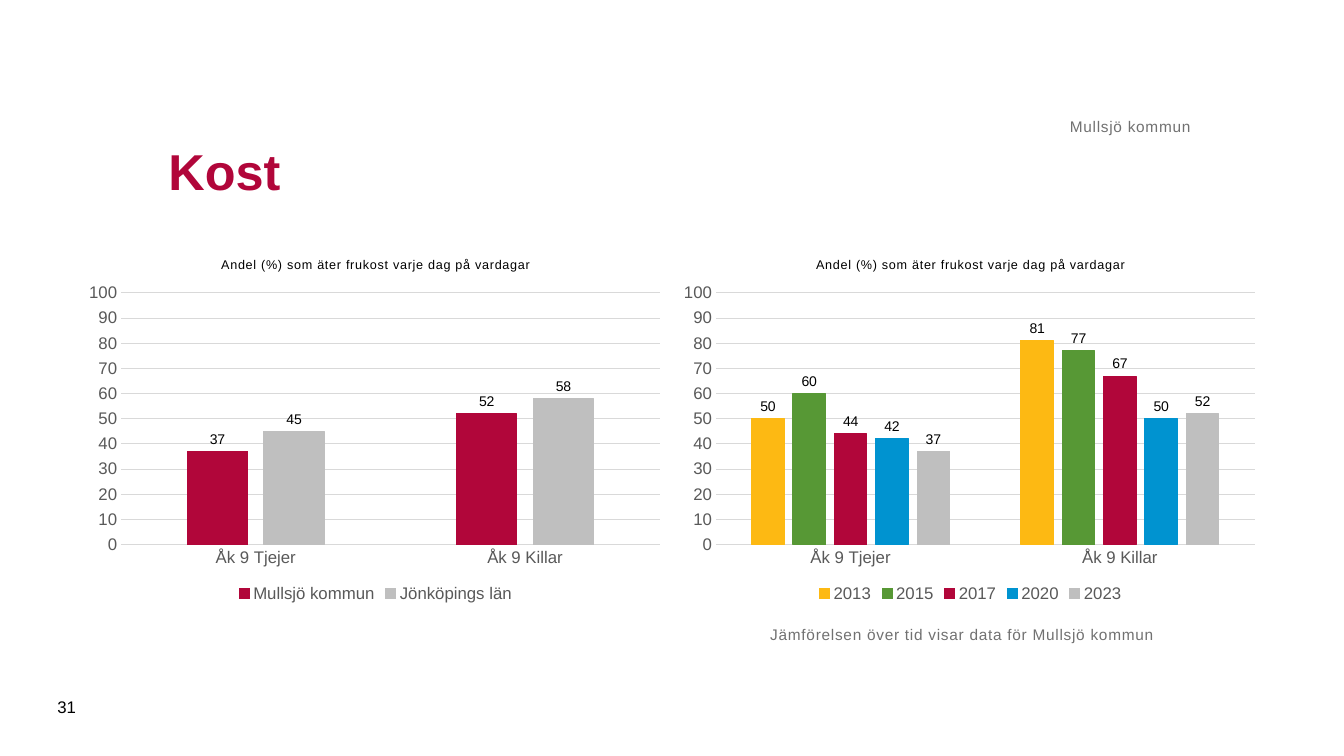
from dataclasses import dataclass

from lxml import etree
from pptx import Presentation
from pptx.chart.data import CategoryChartData
from pptx.dml.color import RGBColor
from pptx.enum.chart import XL_CHART_TYPE, XL_LABEL_POSITION, XL_LEGEND_POSITION, XL_TICK_MARK
from pptx.enum.text import MSO_ANCHOR, PP_ALIGN
from pptx.oxml import parse_xml
from pptx.oxml.ns import nsdecls, qn
from pptx.util import Inches, Pt

COLUMNS = XL_CHART_TYPE.COLUMN_CLUSTERED
OUTSIDE = XL_LABEL_POSITION.OUTSIDE_END
BOTTOM_LEGEND = XL_LEGEND_POSITION.BOTTOM
NO_TICK = XL_TICK_MARK.NONE
TOP, MIDDLE, BOTTOM = MSO_ANCHOR.TOP, MSO_ANCHOR.MIDDLE, MSO_ANCHOR.BOTTOM
LEFT, RIGHT = PP_ALIGN.LEFT, PP_ALIGN.RIGHT


@dataclass(frozen=True)
class Theme:
    font: str = "Arial"
    black: str = "000000"
    axis: str = "595959"
    muted: str = "717171"
    grid: str = "D9D9D9"
    red: str = "B1063A"
    silver: str = "BFBFBF"
    yellow: str = "FDB913"
    green: str = "579835"
    blue: str = "0093D0"
    title_size: float = 36
    axis_size: float = 12
    note_size: float = 11
    label_size: float = 10
    caption_size: float = 9
    hairline: float = 0.75
    tracking: float = 0.5
    number_format: str = "#,##0;#,##0"


class SlideBuilder:
    """Places styled elements on a slide; areas are percentages of its size."""

    def __init__(self, deck, theme):
        self.deck = deck
        self.theme = theme
        self.page = deck.slides.add_slide(deck.slide_layouts[5])

    def place(self, area):
        left, top, width, height = area
        across, down = self.deck.slide_width / 100, self.deck.slide_height / 100
        return int(left * across), int(top * down), int(width * across), int(height * down)

    def style_font(self, font, size, color, bold=False):
        font.name, font.size, font.bold = self.theme.font, Pt(size), bold
        font.color.rgb = RGBColor.from_string(color)

    def style_line(self, line, color):
        line.color.rgb = RGBColor.from_string(color)
        line.width = Pt(self.theme.hairline)

    def add_span(self, para, text, size, color, bold=False, tracking=0):
        span = para.add_run()
        span.text = text
        self.style_font(span.font, size, color, bold)
        if tracking:
            span._r.get_or_add_rPr().set("spc", str(int(tracking * 100)))

    def add_title(self, area, text):
        box = self.page.shapes.title
        box.left, box.top, box.width, box.height = self.place(area)
        frame = box.text_frame
        frame.vertical_anchor = MIDDLE
        para = frame.paragraphs[0]
        para.alignment = LEFT
        self.add_span(para, text, self.theme.title_size, self.theme.red, bold=True)

    def add_text(self, area, text, size, color, align=LEFT, anchor=TOP, inset=True, tracking=0):
        frame = self.page.shapes.add_textbox(*self.place(area)).text_frame
        frame.word_wrap = True
        frame.vertical_anchor = anchor
        if not inset:
            frame.margin_left = frame.margin_top = frame.margin_right = frame.margin_bottom = 0
        para = frame.paragraphs[0]
        para.alignment = align
        self.add_span(para, text, size, color, tracking=tracking)

    def add_note(self, area, text, align=LEFT, anchor=TOP):
        theme = self.theme
        self.add_text(area, text, theme.note_size, theme.muted, align, anchor, False, theme.tracking)

    def add_columns(self, area, caption, categories, series):
        theme = self.theme
        data = CategoryChartData(number_format=theme.number_format)
        data.categories = categories
        for name, values, _ in series:
            data.add_series(name, values)
        chart = self.page.shapes.add_chart(COLUMNS, *self.place(area), data).chart
        self.style_font(chart.font, theme.label_size, theme.black)
        chart.has_title = True
        para = chart.chart_title.text_frame.paragraphs[0]
        self.add_span(para, caption, theme.caption_size, theme.black, tracking=theme.tracking)
        chart.has_legend = True
        chart.legend.position = BOTTOM_LEGEND
        chart.legend.include_in_layout = False
        self.style_font(chart.legend.font, theme.axis_size, theme.axis)
        self.style_axes(chart)
        self.style_series(chart.plots[0], series)
        self.fix_plot_area(chart)

    def style_axes(self, chart):
        theme = self.theme
        for axis in (chart.category_axis, chart.value_axis):
            axis.major_tick_mark = axis.minor_tick_mark = NO_TICK
            self.style_font(axis.tick_labels.font, theme.axis_size, theme.axis)
        self.style_line(chart.category_axis.format.line, theme.grid)
        scale = chart.value_axis
        scale.minimum_scale, scale.maximum_scale, scale.major_unit = 0, 100, 10
        scale.tick_labels.number_format = theme.number_format
        scale.tick_labels.number_format_is_linked = False
        scale.format.line.fill.background()
        scale.has_major_gridlines = True
        self.style_line(scale.major_gridlines.format.line, theme.grid)

    def style_series(self, plot, series):
        theme = self.theme
        plot.gap_width, plot.overlap, plot.vary_by_categories = 219, -27, False
        for bars, (_, _, color) in zip(plot.series, series):
            bars.format.fill.solid()
            bars.format.fill.fore_color.rgb = RGBColor.from_string(color)
            self.style_line(bars.format.line, color)
            labels = bars.data_labels
            labels.show_value = True
            labels.position = OUTSIDE
            labels.number_format = theme.number_format
            labels.number_format_is_linked = False
            self.style_font(labels.font, theme.label_size, theme.black)

    def fix_plot_area(self, chart):
        plot_area = chart._chartSpace.find(".//" + qn("c:plotArea"))
        for layout in plot_area.findall(qn("c:layout")):
            plot_area.remove(layout)
        layout = parse_xml(f"<c:layout {nsdecls('c')}/>")
        manual = etree.SubElement(layout, qn("c:manualLayout"))
        settings = {"layoutTarget": "inner", "xMode": "edge", "yMode": "edge",
                    "x": "0.07", "y": "0.14", "w": "0.91", "h": "0.69"}
        for tag, value in settings.items():
            etree.SubElement(manual, qn("c:" + tag)).set("val", value)
        plot_area.insert(0, layout)


def main():
    theme = Theme()
    deck = Presentation()
    deck.slide_width, deck.slide_height = Inches(13.33), Inches(7.5)
    slide = SlideBuilder(deck, theme)

    caption = "Andel (%) som äter frukost varje dag på vardagar"
    groups = ["Åk 9 Tjejer", "Åk 9 Killar"]
    by_region = [
        ("Mullsjö kommun", (37, 52), theme.red),
        ("Jönköpings län", (45, 58), theme.silver),
    ]
    by_year = [
        ("2013", (50, 81), theme.yellow),
        ("2015", (60, 77), theme.green),
        ("2017", (44, 67), theme.red),
        ("2020", (42, 50), theme.blue),
        ("2023", (37, 52), theme.silver),
    ]
    for left, series in ((5.93, by_region), (50.19, by_year)):
        slide.add_columns((left, 32, 44.04, 48.27), caption, groups, series)

    slide.add_title((11.78, 13.07, 76.82, 18.93), "Kost")
    slide.add_note((57.31, 82.67, 39.83, 12.53), "Jämförelsen över tid visar data för Mullsjö kommun")
    slide.add_note((11.78, 8.27, 76.82, 9.73), "Mullsjö kommun", RIGHT, BOTTOM)
    slide.add_text((3.53, 90.8, 4.28, 5.33), "31", theme.axis_size, theme.black, anchor=MIDDLE)
    deck.save("out.pptx")


if __name__ == "__main__":
    main()
